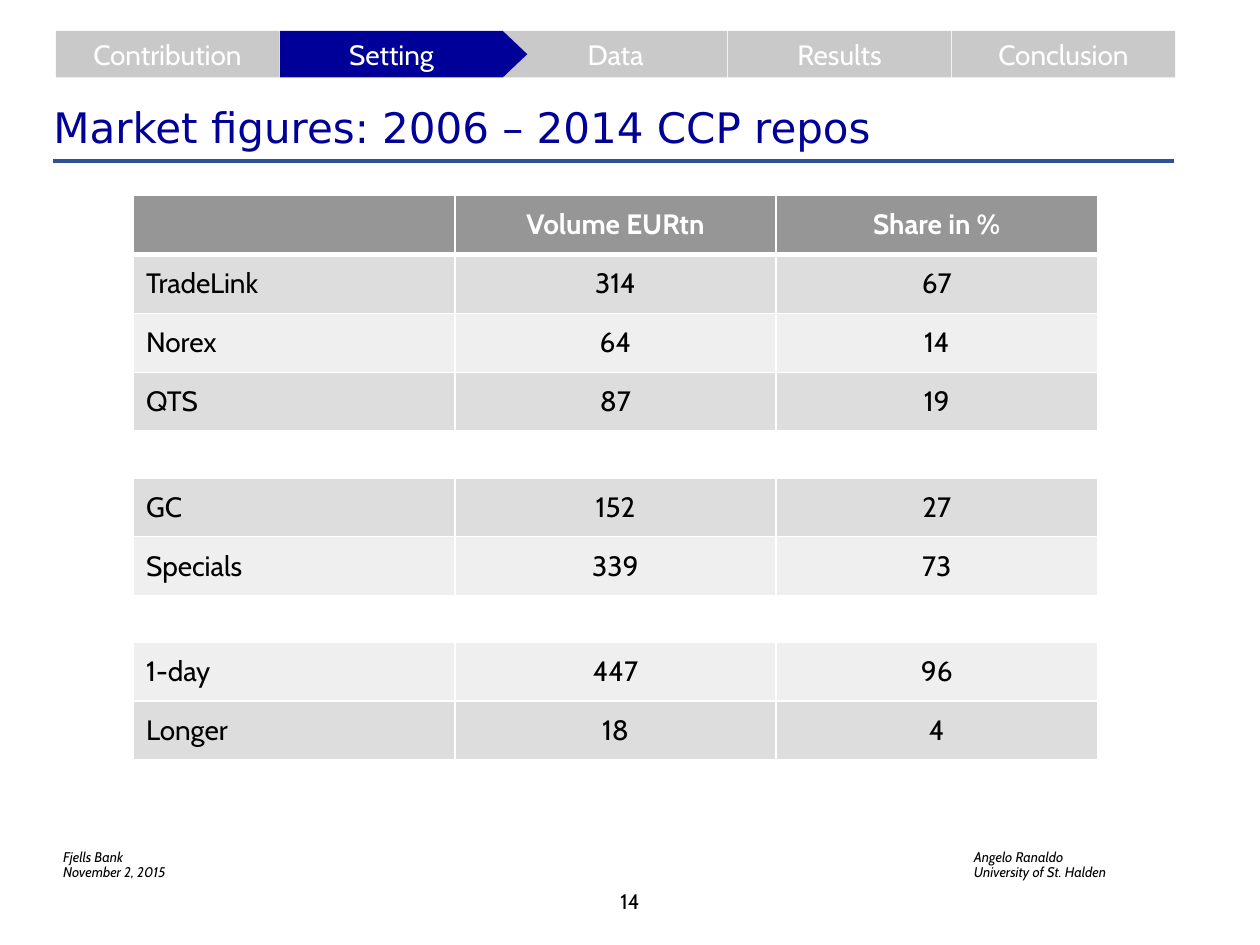
from lxml import etree
from pptx import Presentation
from pptx.dml.color import RGBColor
from pptx.enum.shapes import MSO_CONNECTOR, MSO_SHAPE as Shape
from pptx.enum.text import MSO_ANCHOR as Anchor, PP_ALIGN as Align
from pptx.oxml import parse_xml
from pptx.oxml.ns import nsdecls, qn
from pptx.util import Pt

NAVY, GREY, WHITE, BLACK = "000099", "C9C9C9", "FFFFFF", "000000"
HEADER, DARK, LIGHT = "969696", "DDDDDD", "EFEFEF"


def rgb(value):
    return RGBColor.from_string(value)


def write(frame, text, size, color, align=Align.LEFT, font="Cabin", bold=False, italic=False):
    """Put text in a frame, one paragraph per line, and return its paragraphs."""
    frame.text = text
    for paragraph in frame.paragraphs:
        paragraph.alignment = align
        paragraph.font.name = font
        paragraph.font.size = Pt(size)
        paragraph.font.color.rgb = rgb(color)
        paragraph.font.bold = bold
        paragraph.font.italic = italic
    return frame.paragraphs


presentation = Presentation()
presentation.slide_width, presentation.slide_height = Pt(720), Pt(540)
slide = presentation.slides.add_slide(presentation.slide_layouts[6])
shapes = slide.shapes

# Rule below the title
rule = shapes.add_connector(MSO_CONNECTOR.STRAIGHT, Pt(30.5), Pt(92), Pt(671), Pt(92))
rule.line.color.rgb = rgb("2D5195")
rule.line.width = Pt(2)
etree.SubElement(rule._element.spPr, qn("a:effectLst"))

# Footer
footers = [
    (549.5, "Angelo Ranaldo\nUniversity of St. Halden"),
    (29, "Fjells Bank\nNovember 2, 2015"),
]
for left, text in footers:
    footer = shapes.add_textbox(Pt(left), Pt(482.4), Pt(150), Pt(24.5))
    footer.text_frame.word_wrap = True
    for paragraph in write(footer.text_frame, text, 8, BLACK, italic=True):
        paragraph.line_spacing = 0.9
page_number = shapes.add_textbox(Pt(292.3), Pt(504), Pt(135.4), Pt(21.6))
page_number.text_frame.word_wrap = True
write(page_number.text_frame, "14", 12, BLACK, Align.CENTER)

# Navigation bar
sections = ["Contribution", "Setting", "Data", "Results", "Conclusion"]
for index, section in enumerate(sections):
    tab = shapes.add_shape(Shape.RECTANGLE, Pt(32 + 128 * index), Pt(17.7), Pt(127.5), Pt(26.6))
    tab.shadow.inherit = False
    tab.fill.solid()
    tab.fill.fore_color.rgb = rgb(NAVY if section == "Setting" else GREY)
    tab.line.fill.background()
    write(tab.text_frame, section, 16, WHITE, Align.CENTER)
pointer = shapes.add_shape(Shape.ISOSCELES_TRIANGLE, Pt(281), Pt(24), Pt(26.6), Pt(14))
pointer.rotation = 90
pointer.shadow.inherit = False
pointer.fill.solid()
pointer.fill.fore_color.rgb = rgb(NAVY)
pointer.line.fill.background()

# Title
title = shapes.add_textbox(Pt(30.5), Pt(55), Pt(640.5), Pt(35.3))
frame = title.text_frame
frame.word_wrap = True
frame.vertical_anchor = Anchor.MIDDLE
frame.margin_left = frame.margin_right = frame.margin_top = frame.margin_bottom = 0
write(frame, "Market figures: 2006 – 2014 CCP repos", 24, NAVY, font="DejaVu Sans")

# Table, with a white gap row between the groups
gap = (WHITE, "", "", "")
rows = [
    (HEADER, "", "Volume EURtn", "Share in %"),
    (DARK, "TradeLink", "314", "67"),
    (LIGHT, "Norex", "64", "14"),
    (DARK, "QTS", "87", "19"),
    gap,
    (DARK, "GC", "152", "27"),
    (LIGHT, "Specials", "339", "73"),
    gap,
    (LIGHT, "1-day", "447", "96"),
    (DARK, "Longer", "18", "4"),
]
ROW_HEIGHT, GAP_HEIGHT = 33.7, 26.6
table_height = ROW_HEIGHT * 8 + GAP_HEIGHT * 2
table = shapes.add_table(len(rows), 3, Pt(76.3), Pt(111.7), Pt(550.8), Pt(table_height)).table
for column in table.columns:
    column.width = Pt(183.6)
for row, (fill, *texts) in zip(table.rows, rows):
    is_header, is_gap = fill == HEADER, fill == WHITE
    row.height = Pt(GAP_HEIGHT if is_gap else ROW_HEIGHT)
    for index, (cell, text) in enumerate(zip(row.cells, texts)):
        cell.vertical_anchor = Anchor.MIDDLE
        if is_gap:
            cell.margin_top = cell.margin_bottom = 0
        write(cell.text_frame, text, 16, WHITE if is_header else BLACK,
              Align.CENTER if index else Align.LEFT, bold=is_header)
        # Borders come before the fill in the cell properties
        properties = cell._tc.get_or_add_tcPr()
        below_header = fill == DARK and text in rows[1]
        for side in ("lnL", "lnR", "lnT", "lnB"):
            thick = (is_header and side == "lnB") or (below_header and side == "lnT")
            properties.append(parse_xml(
                f'<a:{side} {nsdecls("a")} w="{Pt(3 if thick else 1)}"><a:solidFill>'
                f'<a:srgbClr val="{WHITE}"/></a:solidFill></a:{side}>'))
        cell.fill.solid()
        cell.fill.fore_color.rgb = rgb(fill)

presentation.save("out.pptx")
